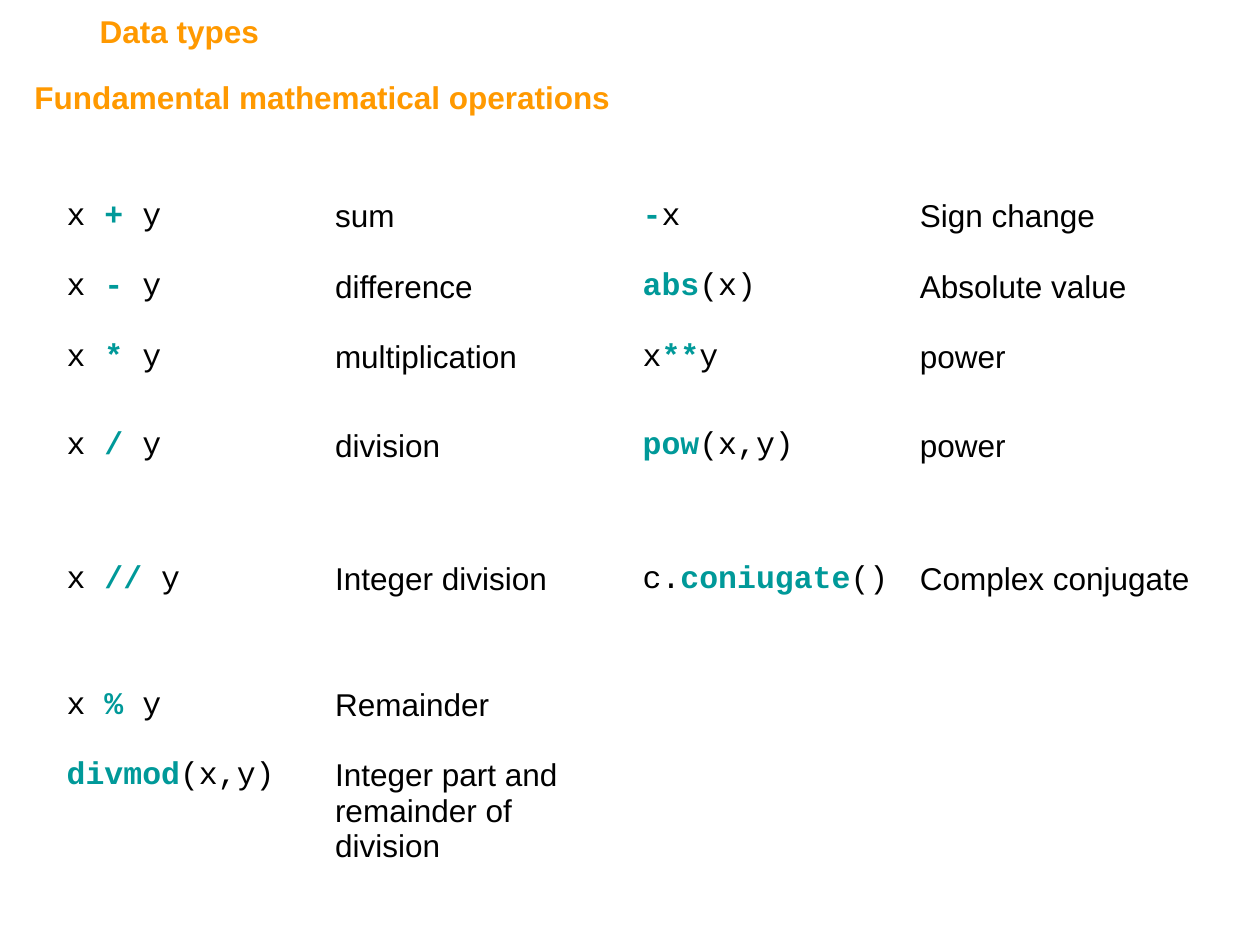
"""Build a slide listing Python's fundamental mathematical operations."""
from dataclasses import dataclass

from pptx import Presentation
from pptx.dml.color import RGBColor
from pptx.enum.text import MSO_AUTO_SIZE, PP_ALIGN
from pptx.slide import Slide
from pptx.table import _Cell
from pptx.text.text import Font
from pptx.util import Cm, Length, Pt


@dataclass(frozen=True)
class Theme:
    heading: RGBColor = RGBColor(0xFF, 0x99, 0x00)
    operator: RGBColor = RGBColor(0x00, 0x99, 0x99)
    body: RGBColor = RGBColor(0x00, 0x00, 0x00)
    size: Length = Pt(18)
    text_font: str = "Arial"
    code_font: str = "Courier New"


@dataclass(frozen=True)
class Operation:
    before: str
    operator: str
    after: str
    meaning: str


@dataclass(frozen=True)
class Heading:
    text: str
    left: float
    top: float
    width: float
    height: float
    align: PP_ALIGN
    inset_left: float = 0.25
    inset_top: float = 0.13


THEME = Theme()
HEADINGS = [
    Heading("Fundamental mathematical operations", 0.38, 1.45, 12.24, 1.02, PP_ALIGN.CENTER),
    Heading("Data types", 0, 0, 5.51, 1.27, PP_ALIGN.LEFT, 2.01, 0.25),
]
BINARY_OPERATIONS = [
    Operation("x ", "+", " y", "sum"),
    Operation("x ", "-", " y", "difference"),
    Operation("x ", "*", " y", "multiplication"),
    Operation("x ", "/", " y", "division"),
    Operation("x ", "//", " y", "Integer division"),
    Operation("x ", "%", " y", "Remainder"),
    Operation("", "divmod", "(x,y)", "Integer part and remainder of division"),
]
OTHER_OPERATIONS = [
    Operation("", "-", "x", "Sign change"),
    Operation("", "abs", "(x)", "Absolute value"),
    Operation("x", "**", "y", "power"),
    Operation("", "pow", "(x,y)", "power"),
    Operation("c.", "coniugate", "()", "Complex conjugate"),
]
COLUMN_WIDTHS = [5.41, 6.2, 5.59, 5.99]
ROW_HEIGHTS = [1.42, 1.42, 1.78, 2.69, 2.54, 1.42, 1.78, 1.42]


def style_font(font: Font, name: str, color: RGBColor, bold: bool = False) -> None:
    font.name = name
    font.size = THEME.size
    font.bold = bold
    font.color.rgb = color


def add_heading(page: Slide, heading: Heading) -> None:
    box = page.shapes.add_textbox(
        Cm(heading.left), Cm(heading.top), Cm(heading.width), Cm(heading.height))
    frame = box.text_frame
    frame.word_wrap = False
    frame.auto_size = MSO_AUTO_SIZE.SHAPE_TO_FIT_TEXT
    frame.margin_left = Cm(heading.inset_left)
    frame.margin_top = frame.margin_bottom = Cm(heading.inset_top)
    frame.text = heading.text
    para = frame.paragraphs[0]
    para.alignment = heading.align
    style_font(para.runs[0].font, THEME.text_font, THEME.heading, bold=True)


def write_operation(code_cell: _Cell, meaning_cell: _Cell, operation: Operation) -> None:
    para = code_cell.text_frame.paragraphs[0]
    parts = [
        (operation.before, THEME.body, False),
        (operation.operator, THEME.operator, True),
        (operation.after, THEME.body, False),
    ]
    for text, color, bold in parts:
        if text:
            span = para.add_run()
            span.text = text
            style_font(span.font, THEME.code_font, color, bold)
    meaning_cell.text_frame.text = operation.meaning
    span = meaning_cell.text_frame.paragraphs[0].runs[0]
    style_font(span.font, THEME.text_font, THEME.body)


def add_operations_table(page: Slide) -> None:
    table = page.shapes.add_table(
        len(ROW_HEIGHTS), len(COLUMN_WIDTHS), Cm(1.09), Cm(3.89),
        Cm(sum(COLUMN_WIDTHS)), Cm(sum(ROW_HEIGHTS))).table
    table.first_row = False
    table.horz_banding = False
    for column, width in zip(table.columns, COLUMN_WIDTHS):
        column.width = Cm(width)
    for row, height in zip(table.rows, ROW_HEIGHTS):
        row.height = Cm(height)
    for cell in table.iter_cells():
        cell.fill.background()
    for first_column, operations in ((0, BINARY_OPERATIONS), (2, OTHER_OPERATIONS)):
        for row_index, operation in enumerate(operations):
            write_operation(
                table.cell(row_index, first_column),
                table.cell(row_index, first_column + 1),
                operation)


def main() -> None:
    deck = Presentation()
    deck.slide_width, deck.slide_height = Cm(25.4), Cm(19.05)
    page = deck.slides.add_slide(deck.slide_layouts[6])
    add_operations_table(page)
    for heading in HEADINGS:
        add_heading(page, heading)
    deck.save("out.pptx")


if __name__ == "__main__":
    main()
